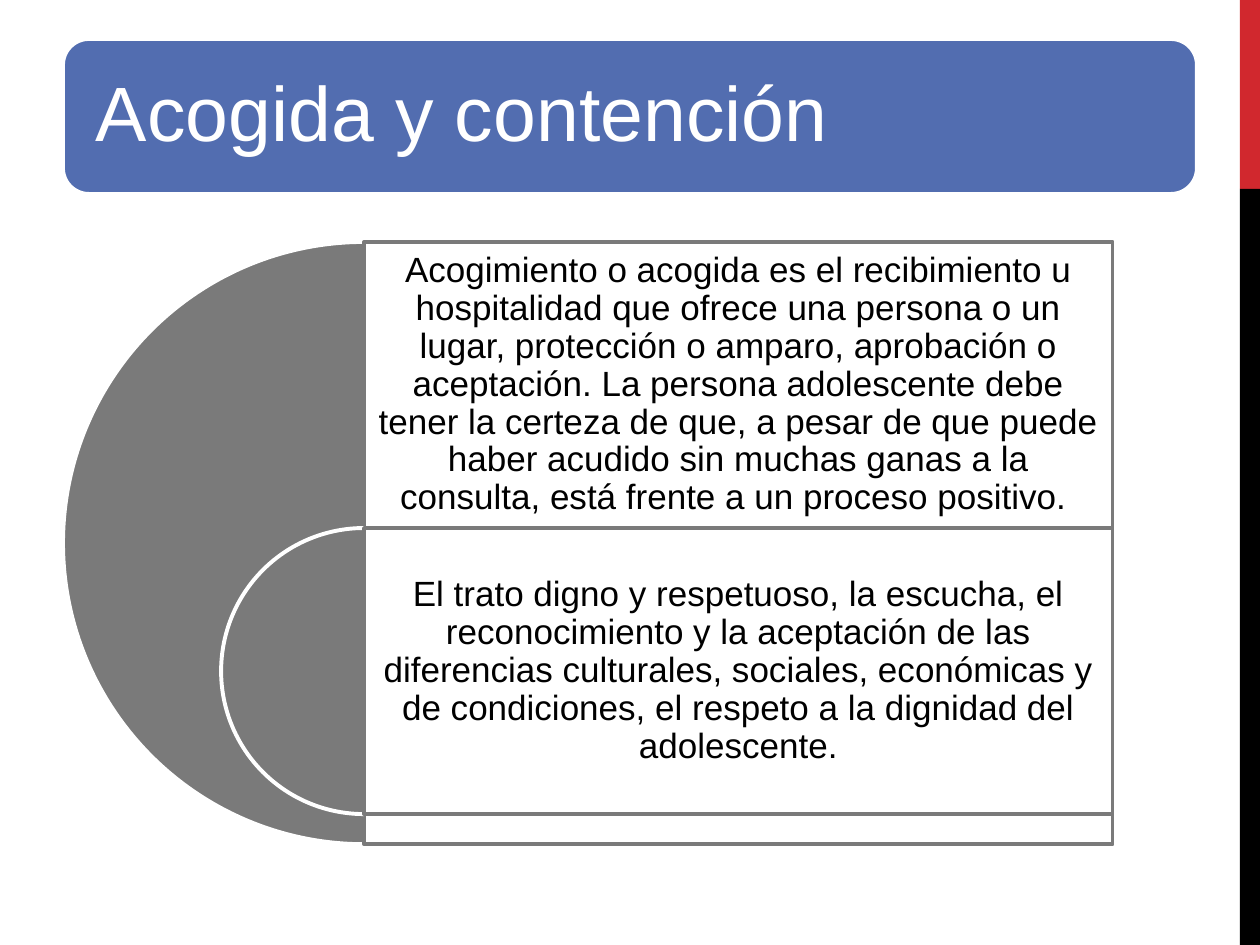
from dataclasses import dataclass

from lxml import etree
from pptx import Presentation
from pptx.dml.color import RGBColor
from pptx.enum.shapes import MSO_SHAPE
from pptx.enum.text import MSO_ANCHOR, PP_ALIGN
from pptx.oxml.ns import qn
from pptx.util import Inches, Pt

RECTANGLE = MSO_SHAPE.RECTANGLE
ROUNDED = MSO_SHAPE.ROUNDED_RECTANGLE
PIE = MSO_SHAPE.PIE
MIDDLE = MSO_ANCHOR.MIDDLE
LEFT = PP_ALIGN.LEFT
CENTER = PP_ALIGN.CENTER

TITLE = "Acogida y contención"
LAYERS = [
    "Acogimiento o acogida es el recibimiento u hospitalidad que ofrece una persona "
    "o un lugar, protección o amparo, aprobación o aceptación. La persona adolescente "
    "debe tener la certeza de que, a pesar de que puede haber acudido sin muchas ganas "
    "a la consulta, está frente a un proceso positivo. ",
    "El trato digno y respetuoso, la escucha, el reconocimiento y la aceptación de las "
    "diferencias culturales, sociales, económicas y de condiciones, el respeto a la "
    "dignidad del adolescente.",
]


@dataclass(frozen=True)
class Theme:
    """Colours, font and type sizes of the slide."""

    red: str = "D1282E"
    black: str = "000000"
    white: str = "FFFFFF"
    blue: str = "526DB0"
    gray: str = "7A7A7A"
    font: str = "Arial"
    title_size: int = 44
    body_size: int = 20
    line_width: float = 2.25
    line_spacing: float = 0.9
    panel_opacity: int = 90


@dataclass(frozen=True)
class Box:
    """A rectangle on the slide, in inches."""

    left: float
    top: float
    width: float
    height: float

    def emu(self):
        """Return the four lengths for python-pptx."""
        return [Inches(n) for n in (self.left, self.top, self.width, self.height)]

    def inset(self, margin):
        """Return the box shrunk by a margin on every side."""
        return Box(self.left + margin, self.top + margin,
                   self.width - 2 * margin, self.height - 2 * margin)


THEME = Theme()
SLIDE = Box(0, 0, 10, 7.5)


def add_figure(slide, kind, box, fill, line=None, adjustments=()):
    """Add a flat preset shape."""
    shape = slide.shapes.add_shape(kind, *box.emu())
    shape.shadow.inherit = False
    for index, value in enumerate(adjustments):
        shape.adjustments[index] = value
    shape.fill.solid()
    shape.fill.fore_color.rgb = RGBColor.from_string(fill)
    if line:
        shape.line.color.rgb = RGBColor.from_string(line)
        shape.line.width = Pt(THEME.line_width)
    else:
        shape.line.fill.background()
    return shape


def add_label(slide, box, text, size, color, margin, alignment):
    """Add wrapped text centred vertically in the box."""
    frame = slide.shapes.add_textbox(*box.emu()).text_frame
    frame.word_wrap = True
    frame.vertical_anchor = MIDDLE
    frame.margin_left = frame.margin_right = Inches(margin)
    frame.margin_top = frame.margin_bottom = Inches(margin)
    frame.text = text
    paragraph = frame.paragraphs[0]
    paragraph.alignment = alignment
    paragraph.line_spacing = THEME.line_spacing
    font = paragraph.runs[0].font
    font.name = THEME.font
    font.size = Pt(size)
    font.color.rgb = RGBColor.from_string(color)


def set_opacity(shape, percent):
    """Make the solid fill of a shape partly transparent."""
    color = shape.fill._xPr.find(qn("a:solidFill"))[0]
    etree.SubElement(color, qn("a:alpha")).set("val", str(percent * 1000))


def add_side_strip(slide, box):
    """Draw the red and black strip, red on the top fifth."""
    red_height = box.height / 5
    add_figure(slide, RECTANGLE, Box(box.left, box.top, box.width, red_height), THEME.red)
    add_figure(slide, RECTANGLE,
               Box(box.left, box.top + red_height, box.width, box.height - red_height),
               THEME.black)


def add_title_banner(slide, box):
    """Draw the rounded banner with the title."""
    add_figure(slide, ROUNDED, box, THEME.blue, THEME.white, [0.167])
    add_label(slide, box.inset(0.06), TITLE, THEME.title_size, THEME.white, 0.2, LEFT)


def add_target_list(slide, box):
    """Draw nested half discs, each with its panel of text."""
    band = box.height * 0.475
    axis = box.left + box.height / 2
    panel_width = box.left + box.width - axis
    for index, text in enumerate(LAYERS):
        top = box.top + index * band
        diameter = band if index else box.height
        disc = Box(axis - diameter / 2, top, diameter, diameter)
        add_figure(slide, PIE, disc, THEME.gray, THEME.white, [54, 162])
        panel = add_figure(slide, RECTANGLE, Box(axis, top, panel_width, diameter),
                           THEME.white, THEME.gray)
        set_opacity(panel, THEME.panel_opacity)
        add_label(slide, Box(axis, top, panel_width, band), text,
                  THEME.body_size, THEME.black, 0.08, CENTER)


def main():
    """Build and save the presentation."""
    presentation = Presentation()
    presentation.slide_width = Inches(SLIDE.width)
    presentation.slide_height = Inches(SLIDE.height)
    slide = presentation.slides.add_slide(presentation.slide_layouts[6])
    margin = SLIDE.width * 0.05
    strip = 0.16
    add_side_strip(slide, Box(SLIDE.width - strip, 0, strip, SLIDE.height))
    add_title_banner(slide, Box(margin, 0.31, SLIDE.width - 2 * margin, 1.23))
    add_target_list(slide, Box(margin, 1.92, 8.33, 4.78))
    presentation.save("out.pptx")


if __name__ == "__main__":
    main()
